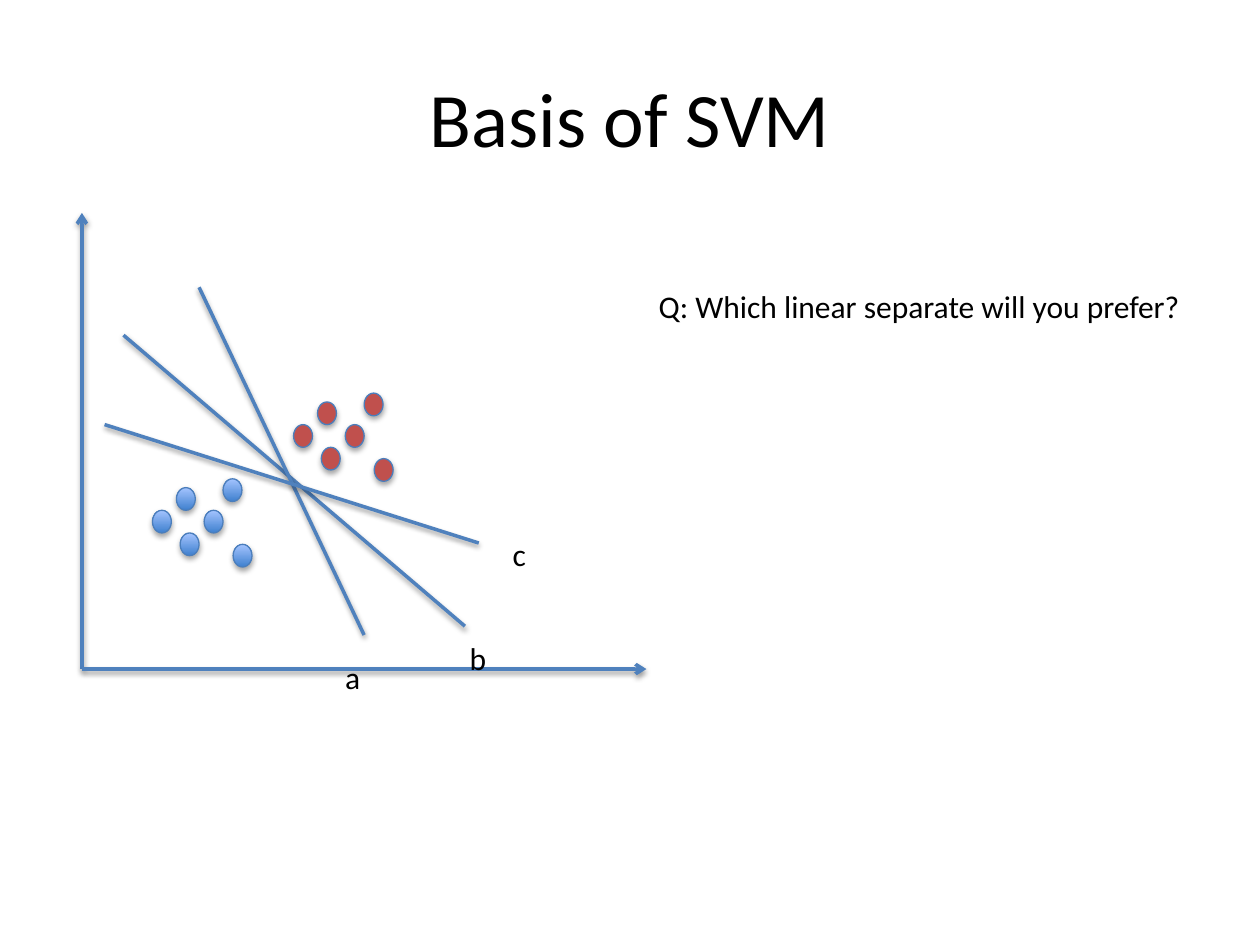
"""Build the slide that compares three separating lines for SVM."""
from typing import NamedTuple, Optional

from pptx import Presentation
from pptx.dml.color import RGBColor
from pptx.enum.shapes import MSO_CONNECTOR, MSO_SHAPE
from pptx.enum.text import MSO_ANCHOR, MSO_AUTO_SIZE, PP_ALIGN
from pptx.oxml import parse_xml
from pptx.oxml.ns import nsdecls, qn
from pptx.util import Inches, Pt

BLACK = RGBColor(0x00, 0x00, 0x00)
LINE_BLUE = RGBColor(0x4F, 0x81, 0xBD)
DOT_EDGE = RGBColor(0x4B, 0x7E, 0xBC)
DARK_BLUE = RGBColor(0x3F, 0x80, 0xCE)
LIGHT_BLUE = RGBColor(0xA4, 0xC4, 0xFF)
RED = RGBColor(0xC0, 0x50, 0x4D)
FONT = "Calibri"
DOT_W, DOT_H = 0.15, 0.18


class Segment(NamedTuple):
    x1: float
    y1: float
    x2: float
    y2: float
    arrow: bool = False


class Cluster(NamedTuple):
    x: float
    y: float
    color: Optional[RGBColor] = None


class Label(NamedTuple):
    text: str
    x: float
    y: float
    w: float


AXES = [Segment(0.65, 5.31, 0.65, 1.69, True), Segment(0.65, 5.31, 5.13, 5.31, True)]
SEPARATORS = [
    Segment(0.98, 2.66, 3.69, 4.97),
    Segment(2.89, 5.04, 1.58, 2.28),
    Segment(0.83, 3.37, 3.8, 4.31),
]
CLUSTERS = [Cluster(1.21, 4.05), Cluster(2.33, 3.37, RED)]
DOT_OFFSETS = [(0, 0), (0.22, 0.18), (0.19, -0.18), (0.41, 0), (0.56, -0.25), (0.64, 0.27)]
LABELS = [
    Label("Q: Which linear separate will you prefer?", 5.13, 2.23, 4.4),
    Label("a", 2.64, 5.17, 0.32),
    Label("b", 3.63, 5.02, 0.33),
    Label("c", 3.97, 4.2, 0.31),
]


def add_shadow(sp, dist: float, alpha: int) -> None:
    """Give a shape or connector a soft shadow straight below it."""
    sp._element.spPr.append(parse_xml(
        f'<a:effectLst {nsdecls("a")}><a:outerShdw blurRad="{Pt(3.1)}" dist="{Pt(dist)}" '
        f'dir="5400000" rotWithShape="0"><a:srgbClr val="000000">'
        f'<a:alpha val="{alpha * 1000}"/></a:srgbClr></a:outerShdw></a:effectLst>'))


def add_segment(s, seg: Segment) -> None:
    """Draw an axis or a separating line."""
    sp = s.shapes.add_connector(
        MSO_CONNECTOR.STRAIGHT, Inches(seg.x1), Inches(seg.y1), Inches(seg.x2), Inches(seg.y2))
    sp.line.color.rgb = LINE_BLUE
    sp.line.width = Pt(2)
    if seg.arrow:
        ln = sp._element.spPr.find(qn("a:ln"))
        ln.append(parse_xml(f'<a:tailEnd {nsdecls("a")} type="arrow"/>'))
    add_shadow(sp, 1.6, 38)


def add_dot(s, x: float, y: float, color: Optional[RGBColor]) -> None:
    """Draw one data point, blue gradient unless a color is given."""
    sp = s.shapes.add_shape(
        MSO_SHAPE.OVAL, Inches(x), Inches(y), Inches(DOT_W), Inches(DOT_H))
    if color is None:
        sp.fill.gradient()
        sp.fill.gradient_angle = 90
        for stop, rgb in zip(sp.fill.gradient_stops, (DARK_BLUE, LIGHT_BLUE)):
            stop.color.rgb = rgb
    else:
        sp.fill.solid()
        sp.fill.fore_color.rgb = color
    sp.line.color.rgb = DOT_EDGE
    sp.line.width = Pt(0.75)
    add_shadow(sp, 1.8, 35)


def set_text(tf, text: str, *, size: int = 18, align=PP_ALIGN.LEFT,
             anchor=MSO_ANCHOR.TOP, wrap: bool = False) -> None:
    """Write one formatted run into a text frame."""
    tf.word_wrap = wrap
    tf.vertical_anchor = anchor
    p = tf.paragraphs[0]
    p.alignment = align
    r = p.add_run()
    r.text = text
    r.font.name = FONT
    r.font.size = Pt(size)
    r.font.color.rgb = BLACK


def add_label(s, label: Label) -> None:
    """Place a text box that grows with its text."""
    sp = s.shapes.add_textbox(
        Inches(label.x), Inches(label.y), Inches(label.w), Inches(0.4))
    set_text(sp.text_frame, label.text)
    sp.text_frame.auto_size = MSO_AUTO_SIZE.SHAPE_TO_FIT_TEXT


def main() -> None:
    """Build and save the slide."""
    prs = Presentation()
    prs.slide_width, prs.slide_height = Inches(10), Inches(7.5)
    s = prs.slides.add_slide(prs.slide_layouts[5])
    title = s.shapes.title
    title.left, title.top = Inches(0.5), Inches(0.3)
    title.width, title.height = Inches(9), Inches(1.25)
    set_text(title.text_frame, "Basis of SVM", size=44, align=PP_ALIGN.CENTER,
             anchor=MSO_ANCHOR.MIDDLE, wrap=True)
    for axis in AXES:
        add_segment(s, axis)
    for cluster in CLUSTERS:
        for dx, dy in DOT_OFFSETS:
            add_dot(s, cluster.x + dx, cluster.y + dy, cluster.color)
    for separator in SEPARATORS:
        add_segment(s, separator)
    for label in LABELS:
        add_label(s, label)
    prs.save("out.pptx")


if __name__ == "__main__":
    main()
